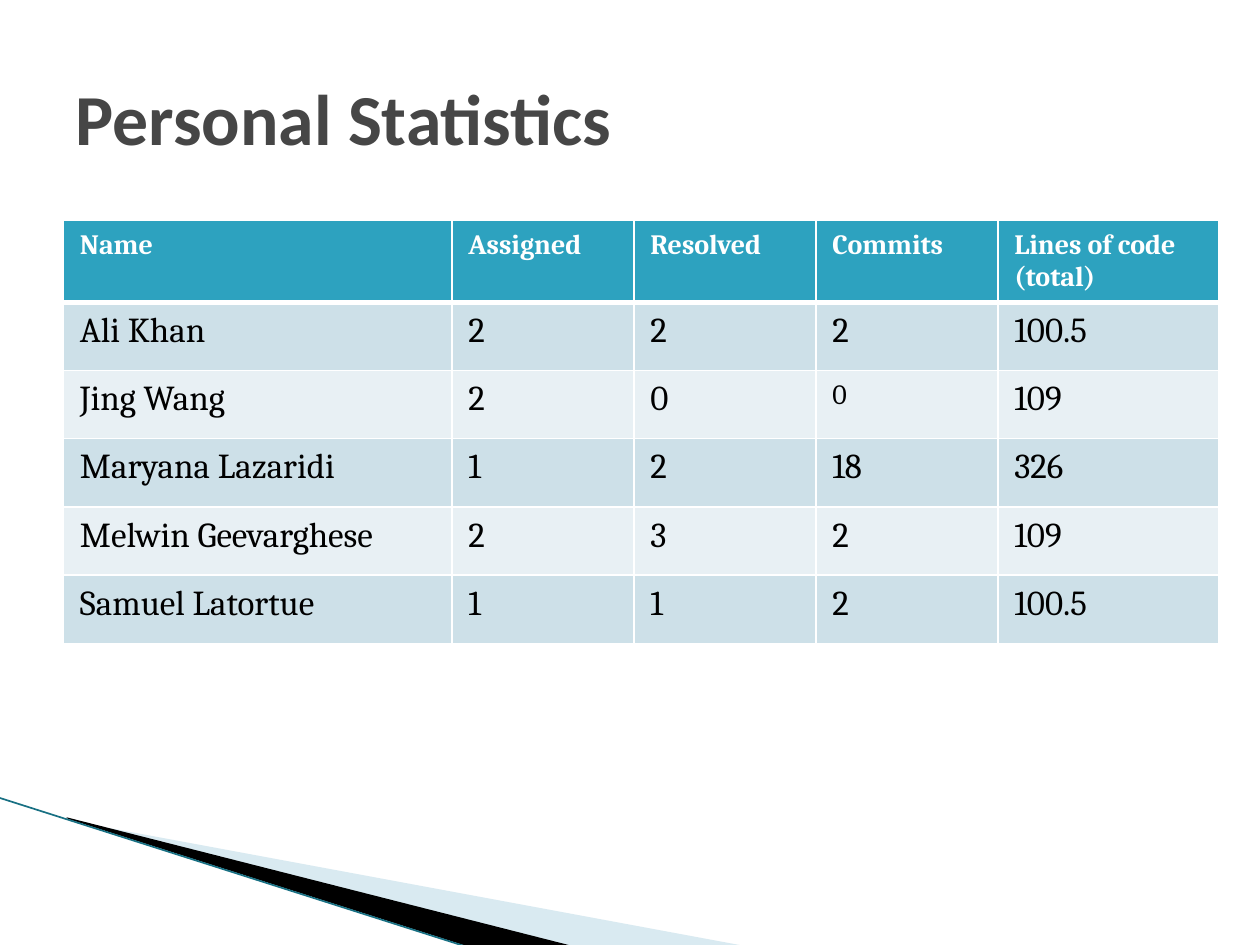
from dataclasses import dataclass

import lxml.etree
import pptx
import pptx.dml.color
import pptx.enum.shapes
import pptx.enum.text
import pptx.oxml.ns
import pptx.slide
import pptx.table
import pptx.util

Pt = pptx.util.Pt
RGBColor = pptx.dml.color.RGBColor
qn = pptx.oxml.ns.qn

WHITE = RGBColor(0xFF, 0xFF, 0xFF)
BLACK = RGBColor(0, 0, 0)
TITLE_GREY = RGBColor(0x46, 0x46, 0x46)
HEADER_BLUE = RGBColor(0x2D, 0xA2, 0xBF)
BAND_DARK = RGBColor(0xCD, 0xE0, 0xE8)
BAND_LIGHT = RGBColor(0xE8, 0xF0, 0xF4)
WEDGE_BLUE = RGBColor(0xA0, 0xCB, 0xDC)
EDGE_TEAL = RGBColor(0x18, 0x70, 0x83)

COLUMN_WIDTHS = (222, 104, 104, 104, 126)
ROW_HEIGHT = 39
HEADERS = ("Name", "Assigned", "Resolved", "Commits", "Lines of code (total)")
PEOPLE = (
    ("Ali Khan", "2", "2", "2", "100.5"),
    ("Jing Wang", "2", "0", "0", "109"),
    ("Maryana Lazaridi", "1", "2", "18", "326"),
    ("Melwin Geevarghese", "2", "3", "2", "109"),
    ("Samuel Latortue", "1", "1", "2", "100.5"),
)
SMALL_CELL = (2, 3)  # Jing Wang's commits are set smaller


@dataclass
class Wedge:
    points: list[tuple[float, float]]
    color: RGBColor
    opacity: int = 100


@dataclass
class CellStyle:
    fill: RGBColor
    color: RGBColor
    size: float
    bold: bool = False
    top: float = 1
    bottom: float = 1


WEDGES = (
    Wedge([(39.6, 468.7), (428.4, 540.7), (328.3, 540.7), (39.6, 468)], WEDGE_BLUE, 40),
    Wedge([(38.2, 467.3), (329, 540.7), (267.8, 541.4), (38.9, 468)], BLACK),
)


def draw_wedge(slide: pptx.slide.Slide, wedge: Wedge) -> None:
    builder = slide.shapes.build_freeform(*wedge.points[0], scale=Pt(1))
    builder.add_line_segments(wedge.points[1:], close=True)
    shape = builder.convert_to_shape()
    shape.shadow.inherit = False
    shape.fill.solid()
    shape.fill.fore_color.rgb = wedge.color
    shape.line.fill.background()
    if wedge.opacity < 100:
        color = shape.fill._xPr.find(qn("a:solidFill"))[0]
        lxml.etree.SubElement(color, qn("a:alpha"), val=str(wedge.opacity * 1000))


def draw_edge(slide: pptx.slide.Slide) -> None:
    edge = slide.shapes.add_connector(
        pptx.enum.shapes.MSO_CONNECTOR.STRAIGHT, Pt(-0.7), Pt(455.8), Pt(267.8), Pt(541.4))
    edge.line.color.rgb = EDGE_TEAL
    edge.line.width = Pt(0.95)
    lxml.etree.SubElement(edge._element.spPr, qn("a:effectLst"))


def set_borders(cell: pptx.table._Cell, style: CellStyle) -> None:
    properties = cell._tc.get_or_add_tcPr()
    widths = {"a:lnL": 1, "a:lnR": 1, "a:lnT": style.top, "a:lnB": style.bottom}
    for position, (tag, width) in enumerate(widths.items()):
        line = lxml.etree.Element(qn(tag), w=str(Pt(width)))
        fill = lxml.etree.SubElement(line, qn("a:solidFill"))
        lxml.etree.SubElement(fill, qn("a:srgbClr"), val=str(WHITE))
        properties.insert(position, line)


def fill_cell(cell: pptx.table._Cell, text: str, style: CellStyle) -> None:
    cell.text = text
    cell.margin_left = cell.margin_right = Pt(9.4)
    cell.margin_top = cell.margin_bottom = Pt(5)
    cell.fill.solid()
    cell.fill.fore_color.rgb = style.fill
    font = cell.text_frame.paragraphs[0].font
    font.name = "Cambria"
    font.size = Pt(style.size)
    font.bold = style.bold
    font.color.rgb = style.color
    set_borders(cell, style)


def cell_style(row: int, column: int) -> CellStyle:
    if row == 0:
        return CellStyle(HEADER_BLUE, WHITE, 16, bold=True, bottom=3)
    return CellStyle(
        fill=BAND_DARK if row % 2 else BAND_LIGHT,
        color=BLACK,
        size=16 if (row, column) == SMALL_CELL else 20,
        top=3 if row == 1 else 1,
    )


def draw_statistics(slide: pptx.slide.Slide) -> None:
    rows = (HEADERS, *PEOPLE)
    table = slide.shapes.add_table(
        len(rows), len(HEADERS), Pt(36.3), Pt(126),
        Pt(sum(COLUMN_WIDTHS)), Pt(ROW_HEIGHT * len(rows))).table
    for column, width in zip(table.columns, COLUMN_WIDTHS):
        column.width = Pt(width)
    for row, texts in enumerate(rows):
        table.rows[row].height = Pt(ROW_HEIGHT)
        for column, text in enumerate(texts):
            fill_cell(table.cell(row, column), text, cell_style(row, column))


def draw_title(slide: pptx.slide.Slide) -> None:
    title = slide.shapes.title
    title.left, title.top, title.width, title.height = Pt(36), Pt(21.6), Pt(648), Pt(90)
    title.text_frame.text = "Personal Statistics"
    title.text_frame.vertical_anchor = pptx.enum.text.MSO_ANCHOR.MIDDLE
    paragraph = title.text_frame.paragraphs[0]
    paragraph.alignment = pptx.enum.text.PP_ALIGN.LEFT
    paragraph.font.name = "Calibri"
    paragraph.font.size = Pt(41)
    paragraph.font.bold = True
    paragraph.font.color.rgb = TITLE_GREY


def main() -> None:
    presentation = pptx.Presentation()
    presentation.slide_width, presentation.slide_height = Pt(720), Pt(540)
    slide = presentation.slides.add_slide(presentation.slide_layouts[5])

    # Corner decoration
    for wedge in WEDGES:
        draw_wedge(slide, wedge)
    draw_edge(slide)

    # Title and table
    draw_title(slide)
    draw_statistics(slide)
    presentation.save("out.pptx")


if __name__ == "__main__":
    main()
